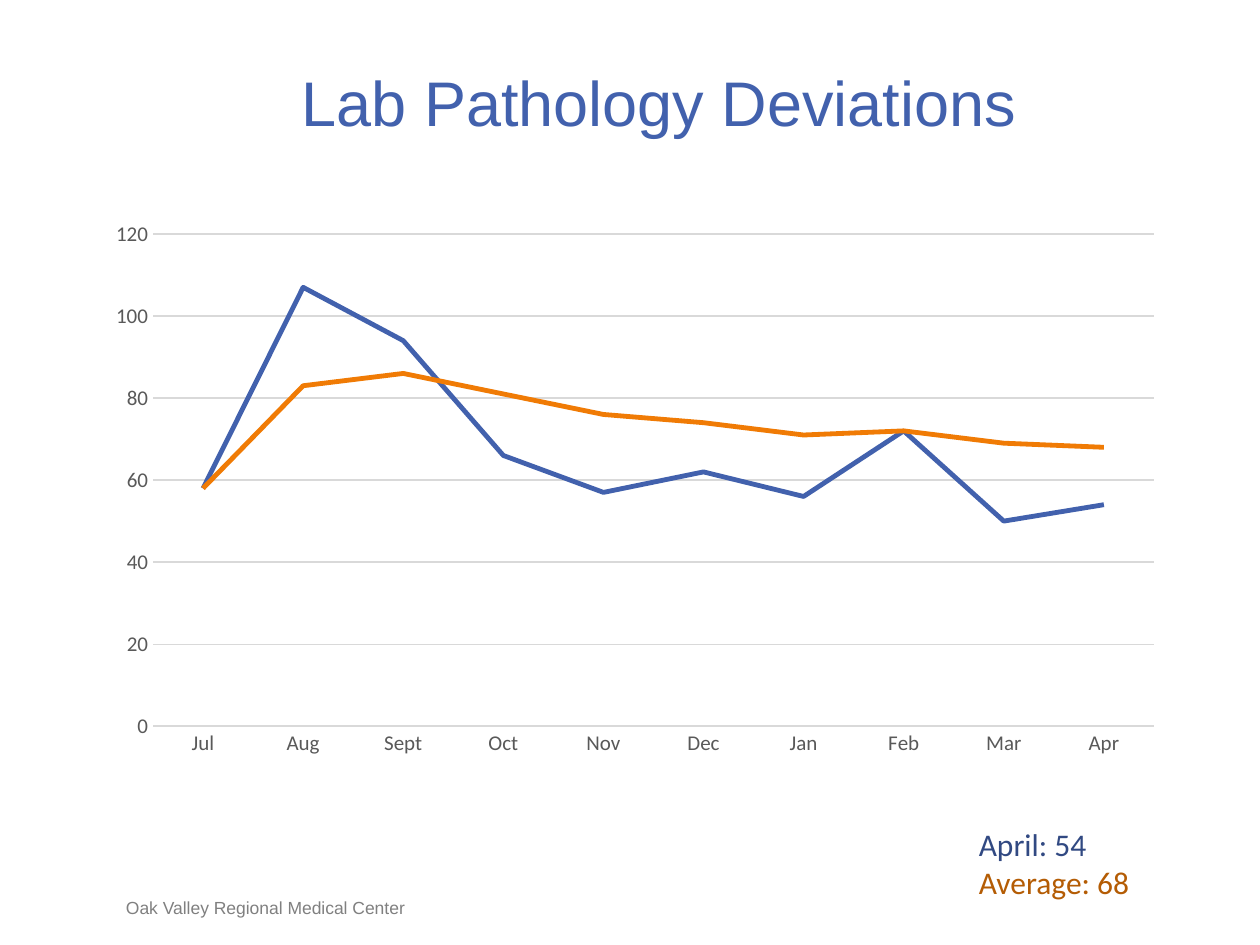
"""Build the lab pathology deviations slide with its line chart."""
from typing import NamedTuple

from pptx import Presentation
from pptx.chart.data import CategoryChartData
from pptx.dml.color import RGBColor
from pptx.enum.chart import XL_CHART_TYPE, XL_TICK_MARK
from pptx.enum.text import MSO_ANCHOR, MSO_AUTO_SIZE, PP_ALIGN
from pptx.util import Inches, Pt

BLUE = RGBColor(0x42, 0x61, 0xAD)
NAVY = RGBColor(0x31, 0x49, 0x82)
ORANGE = RGBColor(0xF0, 0x7B, 0x05)
BROWN = RGBColor(0xB4, 0x5C, 0x04)
GRAY = RGBColor(0x80, 0x80, 0x80)
DARK = RGBColor(0x59, 0x59, 0x59)
PALE = RGBColor(0xD9, 0xD9, 0xD9)

MONTHS = ["Jul", "Aug", "Sept", "Oct", "Nov", "Dec", "Jan", "Feb", "Mar", "Apr"]


class Box(NamedTuple):
    left: float
    top: float
    width: float
    height: float

    def lengths(self) -> list:
        return [Inches(side) for side in self]


class Line(NamedTuple):
    text: str
    size: int
    face: str
    color: RGBColor


class Trend(NamedTuple):
    name: str
    values: list[int]
    color: RGBColor


TRENDS = [
    Trend("Series 1", [58, 107, 94, 66, 57, 62, 56, 72, 50, 54], BLUE),
    Trend("Series 2", [58, 83, 86, 81, 76, 74, 71, 72, 69, 68], ORANGE),
]


def style(font, size: int, face: str, color: RGBColor) -> None:
    font.size, font.name = Pt(size), face
    font.color.rgb = color


def write(frame, lines: list[Line], anchor=MSO_ANCHOR.TOP, inset: bool = True) -> None:
    frame.word_wrap = True
    frame.auto_size = MSO_AUTO_SIZE.SHAPE_TO_FIT_TEXT
    frame.vertical_anchor = anchor
    if not inset:
        frame.margin_left = frame.margin_right = 0
        frame.margin_top = frame.margin_bottom = 0
    frame.text = "\n".join(line.text for line in lines)
    for para, line in zip(frame.paragraphs, lines):
        style(para.font, line.size, line.face, line.color)


def add_text(slide, box: Box, lines: list[Line], **options) -> None:
    write(slide.shapes.add_textbox(*box.lengths()).text_frame, lines, **options)


def add_title(slide, box: Box, line: Line) -> None:
    title = slide.shapes.title
    title.left, title.top, title.width, title.height = box.lengths()
    write(title.text_frame, [line], inset=False)
    title.text_frame.paragraphs[0].alignment = PP_ALIGN.CENTER


def add_trends(slide, box: Box, trends: list[Trend]) -> None:
    data = CategoryChartData()
    data.categories = MONTHS
    for trend in trends:
        data.add_series(trend.name, trend.values)
    chart = slide.shapes.add_chart(XL_CHART_TYPE.LINE, *box.lengths(), data).chart
    chart.has_legend = chart.has_title = False
    chart.font.size, chart.font.name = Pt(10), "Calibri"
    chart.plots[0].vary_by_categories = False
    for series, trend in zip(chart.plots[0].series, trends):
        series.smooth = False
        series.format.line.color.rgb = trend.color
        series.format.line.width = Pt(2.75)
    months, scale = chart.category_axis, chart.value_axis
    for axis in (months, scale):
        axis.major_tick_mark = axis.minor_tick_mark = XL_TICK_MARK.NONE
        style(axis.tick_labels.font, 12, "Calibri", DARK)
    scale.minimum_scale, scale.maximum_scale, scale.major_unit = 0, 120, 20
    scale.format.line.fill.background()
    scale.has_major_gridlines = True
    for rule, width in ((months.format.line, 1), (scale.major_gridlines.format.line, 0.75)):
        rule.color.rgb = PALE
        rule.width = Pt(width)


def main() -> None:
    deck = Presentation()
    deck.slide_width, deck.slide_height = Inches(10), Inches(7.5)
    slide = deck.slides.add_slide(deck.slide_layouts[5])
    add_text(slide, Box(1, 7.12, 3.17, 0.17),
             [Line("Oak Valley Regional Medical Center", 10, "Arial", GRAY)],
             anchor=MSO_ANCHOR.BOTTOM, inset=False)
    add_title(slide, Box(0.98, 0.5, 8.5, 0.61),
              Line("Lab Pathology Deviations", 36, "Arial", BLUE))
    add_text(slide, Box(7.67, 6.5, 2, 0.71),
             [Line("April: 54", 18, "Calibri", NAVY),
              Line("Average: 68", 18, "Calibri", BROWN)])
    add_trends(slide, Box(0.75, 1.67, 8.58, 4.42), TRENDS)
    deck.save("out.pptx")


if __name__ == "__main__":
    main()
